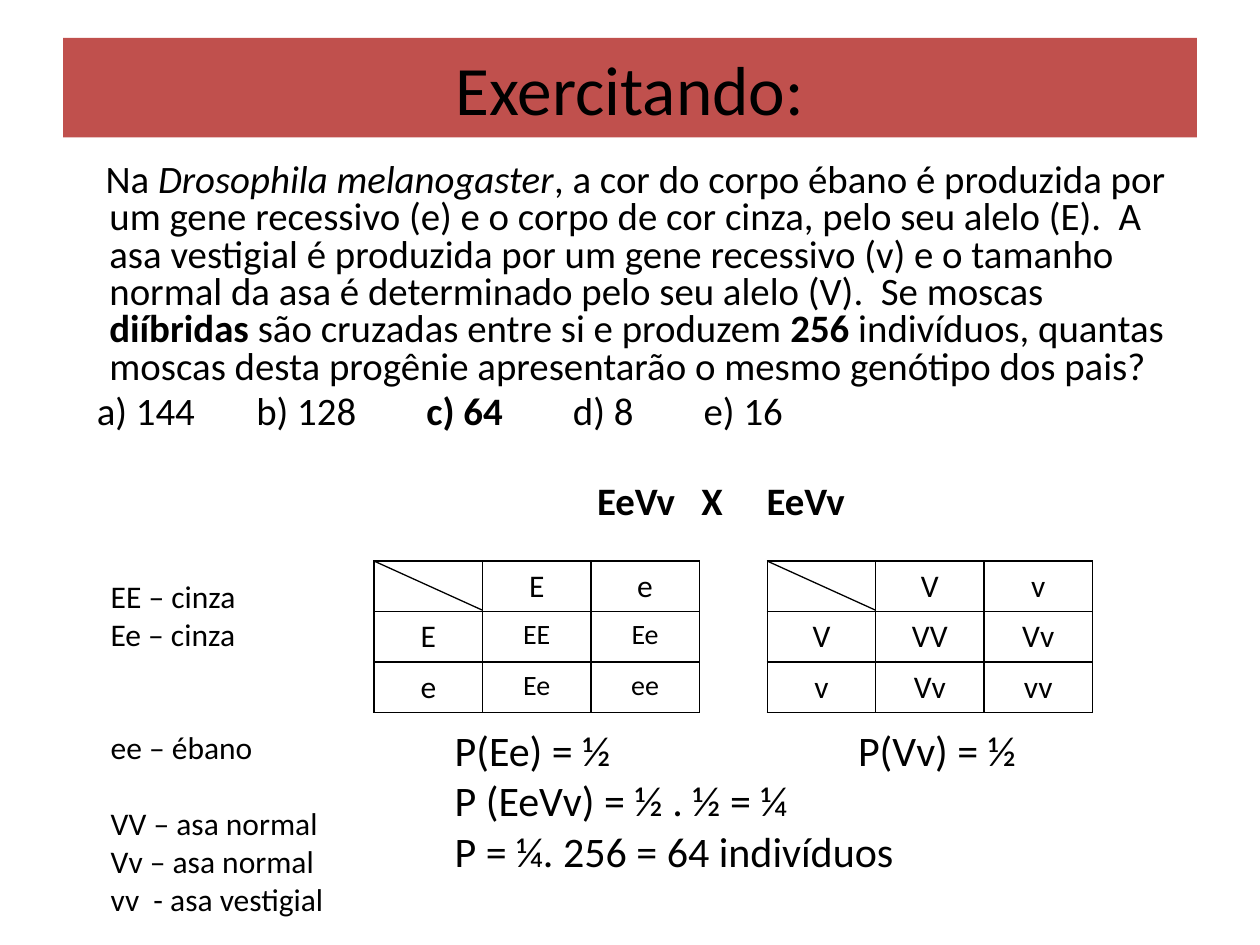
"""Build a genetics exercise slide with two Punnett squares."""
from lxml import etree
from pptx import Presentation
from pptx.dml.color import RGBColor
from pptx.enum.shapes import MSO_CONNECTOR
from pptx.enum.text import MSO_ANCHOR, PP_ALIGN
from pptx.oxml.ns import qn
from pptx.util import Inches, Pt

LINE = MSO_CONNECTOR.STRAIGHT
MID = MSO_ANCHOR.MIDDLE
CENTER = PP_ALIGN.CENTER
HEX = {"ink": "000000", "band": "C0504D"}
INK = RGBColor.from_string(HEX["ink"])
FONT = "Calibri"

deck = Presentation()
deck.slide_width, deck.slide_height = Inches(10), Inches(7.5)
COL, ROW = deck.slide_width / 100, deck.slide_height / 100
slide = deck.slides.add_slide(deck.slide_layouts[5])
shapes = slide.shapes


def write(para, text, size, bold=False, italic=False, space=0):
    """Add one run, with optional letter spacing in points."""
    run = para.add_run()
    run.text = text
    font = run.font
    font.name, font.size, font.bold, font.italic = FONT, Pt(size), bold, italic
    font.color.rgb = INK
    if space:
        run._r.get_or_add_rPr().set("spc", str(space * 100))


def indent(para, left, first=0):
    """Set the margin and first-line indent in inches."""
    props = para._p.get_or_add_pPr()
    props.set("marL", str(Inches(left)))
    props.set("indent", str(Inches(first)))


title = shapes.title
title.left, title.top = int(5 * COL), int(4 * ROW)
title.width, title.height = int(90 * COL), int(10.55 * ROW)
title.fill.solid()
title.fill.fore_color.rgb = RGBColor.from_string(HEX["band"])
title.text_frame.vertical_anchor = MID
head = title.text_frame.paragraphs[0]
head.alignment = CENTER
write(head, "Exercitando:", 39.6)

frames = []
for x, y, wide, high in [(3.9, 16.67, 90, 39.6), (7.8, 60.4, 21.1, 29.6), (32.8, 76, 57.8, 17.5)]:
    box = shapes.add_textbox(int(x * COL), int(y * ROW), int(wide * COL), int(high * ROW))
    box.text_frame.word_wrap = True
    frames.append(box.text_frame)
body, key, sums = frames

wider = (" ", False, False, 35)
texts = [
    (4.4, 0.38, -0.03, [
        ("Na ",),
        ("Drosophila melanogaster", False, True),
        (", a cor do corpo ébano é produzida por um gene recessivo (e) e o corpo de cor cinza, "
         "pelo seu alelo (E).  A asa vestigial é produzida por um gene recessivo (v) e o tamanho "
         "normal da asa é determinado pelo seu alelo (V).  Se moscas ",),
        ("diíbridas", True),
        (" são cruzadas entre si e produzem ",),
        ("256", True),
        (" indivíduos, quantas moscas desta progênie apresentarão o mesmo genótipo dos pais?",)]),
    (4.4, 0.28, 0, [
        ("a) 144",), (" ", False, False, 30), ("b) 128",), wider,
        ("c) 64", True), wider, ("d) 8",), wider, ("e) 16",)]),
    (30.4, 4.25, 0, [
        ("EeVv", True), (" ", True, False, 10), ("X", True), (" ", True, False, 20),
        ("EeVv", True)]),
]
for i, (gap, left, first, runs) in enumerate(texts):
    para = body.add_paragraph() if i else body.paragraphs[0]
    para.line_spacing, para.space_before = 0.8, Pt(gap)
    indent(para, left, first)
    for text, *style in runs:
        write(para, text, 22.2, *style)

traits = [("EE – cinza", 0), ("Ee – cinza", 0), ("ee – ébano", 43), ("VV – asa normal", 22),
          ("Vv – asa normal", 0), ("vv  - asa vestigial", 0)]
for i, (text, gap) in enumerate(traits):
    para = key.add_paragraph() if i else key.paragraphs[0]
    para.space_before = Pt(gap)
    write(para, text, 18)

odds = [[("P(Ee) = ½",), (" ", False, False, 136), ("P(Vv) = ½",)],
        [("P (EeVv) = ½ . ½ = ¼",)],
        [("P = ¼. 256 = 64 indivíduos",)]]
for i, runs in enumerate(odds):
    para = sums.add_paragraph() if i else sums.paragraphs[0]
    indent(para, 0.23)
    for text, *style in runs:
        write(para, text, 24, *style)

wide, high = int(8.6 * COL), int(5.33 * ROW)
top = int(59.38 * ROW)
for x, gene, size in [(29.7, "Ee", 16), (60.9, "Vv", 18)]:
    left = int(x * COL)
    grid = shapes.add_table(3, 3, left, top, 3 * wide, 3 * high).table
    grid.first_row = grid.horz_banding = False
    for i in range(3):
        grid.columns[i].width, grid.rows[i].height = wide, high
        for j in range(3):
            cell = grid.cell(i, j)
            cell.fill.background()
            props = cell._tc.get_or_add_tcPr()
            for k, side in enumerate(("lnL", "lnR", "lnT", "lnB")):
                edge = etree.Element(qn("a:" + side), w=str(Pt(1)))
                fill = etree.SubElement(edge, qn("a:solidFill"))
                etree.SubElement(fill, qn("a:srgbClr"), val=HEX["ink"])
                props.insert(k, edge)
            if i or j:
                pair = "".join(sorted(gene[n - 1] for n in (i, j) if n))
                para = cell.text_frame.paragraphs[0]
                para.alignment = CENTER
                write(para, pair, size if i and j else 18)
    slash = shapes.add_connector(LINE, left, top, left + wide, top + int(5.2 * ROW))
    slash.line.color.rgb, slash.line.width = INK, Pt(0.75)
    etree.SubElement(slash._element.spPr, qn("a:effectLst"))

deck.save("out.pptx")
